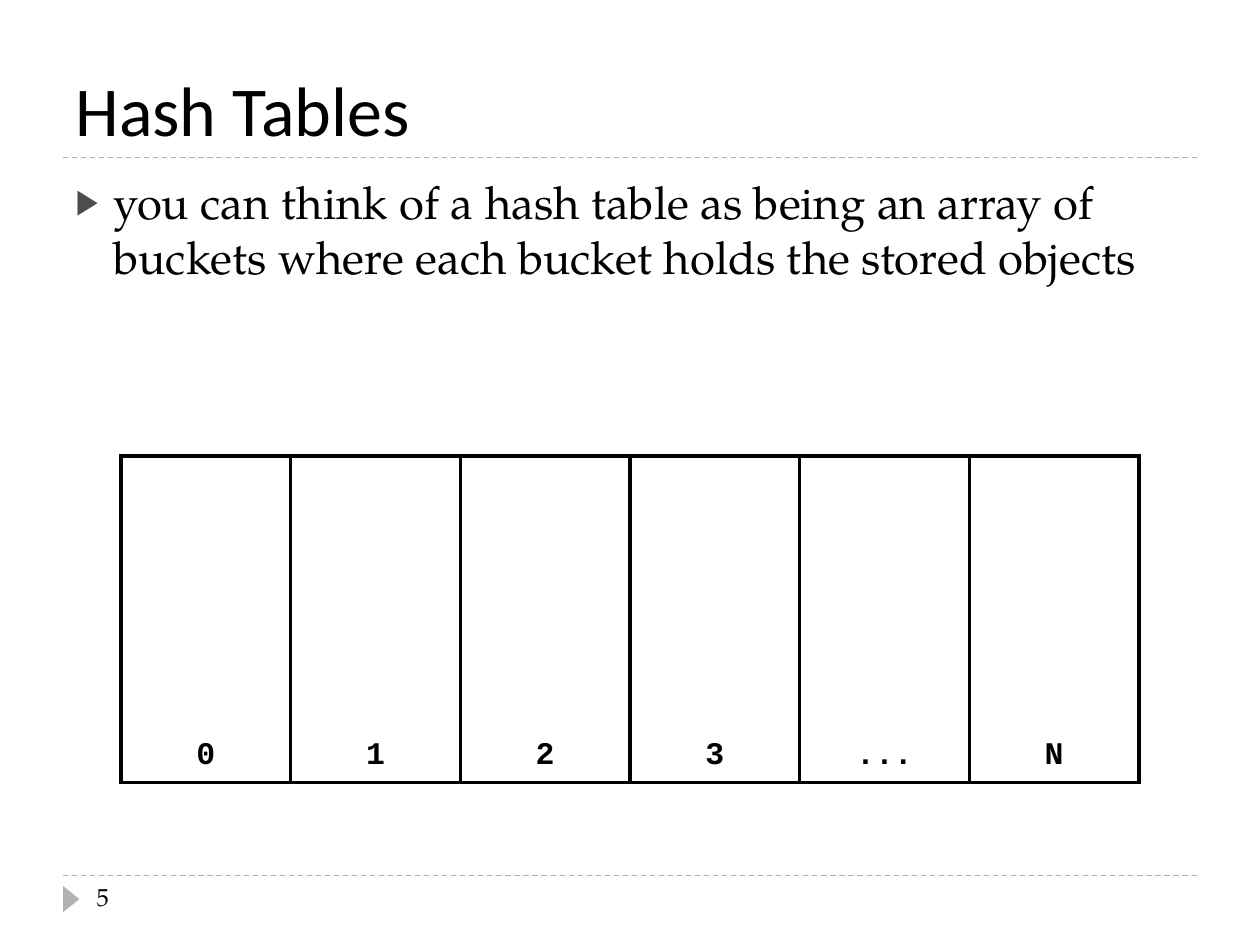
from lxml import etree
from pptx import Presentation
from pptx.dml.color import RGBColor
from pptx.enum.dml import MSO_LINE
from pptx.enum.shapes import MSO_CONNECTOR, MSO_SHAPE
from pptx.enum.text import MSO_ANCHOR, MSO_AUTO_SIZE, PP_ALIGN
from pptx.oxml import parse_xml
from pptx.oxml.ns import nsdecls, qn
from pptx.util import Cm, Pt

STRAIGHT, TRIANGLE = MSO_CONNECTOR.STRAIGHT, MSO_SHAPE.ISOSCELES_TRIANGLE
DASH, BOTTOM, TOP = MSO_LINE.DASH, MSO_ANCHOR.BOTTOM, MSO_ANCHOR.TOP
LEFT, CENTER, NO_FIT = PP_ALIGN.LEFT, PP_ALIGN.CENTER, MSO_AUTO_SIZE.NONE

COLORS = {"text": "000000", "rule": "B2B2B2", "bullet": "4D4D4D", "cell": "FFFFFF"}
HEAD, BODY, CODE = "Calibri", "TeX Gyre Pagella", "Courier New"


def rgb(name):
    return RGBColor.from_string(COLORS[name])


def add_text(tf, text, font, size, align=LEFT, bold=False):
    p = tf.paragraphs[0]
    p.alignment = align
    r = p.add_run()
    r.text = text
    r.font.name, r.font.size, r.font.bold = font, Pt(size), bold
    r.font.color.rgb = rgb("text")
    return p


prs = Presentation()
prs.slide_width, prs.slide_height = Cm(25.4), Cm(19.05)
s = prs.slides.add_slide(prs.slide_layouts[1])

# Dashed rules and footer marker
for y in (17.65, 3.18):
    line = s.shapes.add_connector(STRAIGHT, Cm(1.27), Cm(y), Cm(24.13), Cm(y))
    line.line.color.rgb = rgb("rule")
    line.line.width = Pt(0.75)
    line.line.dash_style = DASH
    etree.SubElement(line._element.spPr, qn("a:effectLst"))

sp = s.shapes.add_shape(TRIANGLE, Cm(1.17), Cm(17.96), Cm(0.53), Cm(0.33))
sp.rotation = 90
sp.shadow.inherit = False
sp.fill.solid()
sp.fill.fore_color.rgb = rgb("rule")
sp.line.fill.background()

# Title
title = s.shapes.title
title.left, title.top, title.width, title.height = Cm(1.27), Cm(0.43), Cm(22.86), Cm(2.74)
tf = title.text_frame
tf.vertical_anchor, tf.auto_size = BOTTOM, NO_FIT
add_text(tf, "Hash Tables", HEAD, 40)

# Slide number
sp = s.shapes.add_textbox(Cm(1.7), Cm(17.65), Cm(5.51), Cm(1.02))
tf = sp.text_frame
tf.word_wrap = True
add_text(tf, "5", BODY, 14)

# Bullet text
body = s.placeholders[1]
body.left, body.top, body.width, body.height = Cm(1.27), Cm(3.38), Cm(22.86), Cm(13.72)
tf = body.text_frame
tf.vertical_anchor, tf.auto_size = TOP, NO_FIT
p = add_text(tf, "you can think of a hash table as being an array of buckets "
             "where each bucket holds the stored objects", BODY, 26)
p.space_before = Pt(6)
pPr = p._p.get_or_add_pPr()
pPr.set("marL", str(Cm(0.76)))
pPr.set("indent", str(-Cm(0.76)))
for xml in (f'<a:buClr {nsdecls("a")}><a:srgbClr val="{COLORS["bullet"]}"/></a:buClr>',
            f'<a:buSzPct {nsdecls("a")} val="76000"/>',
            f'<a:buChar {nsdecls("a")} char="▶"/>'):
    pPr.append(parse_xml(xml))

# Bucket array: tall buckets above their indexes, open between the two rows
INDEXES = ["0", "1", "2", "3", "...", "N"]
ROW_EDGES = ["LRT", "LRB"]
table = s.shapes.add_table(2, len(INDEXES), Cm(2.44), Cm(9.19), Cm(20.52), Cm(6.58)).table
table.first_row = table.horz_banding = False
for col in table.columns:
    col.width = Cm(3.42)
for row, height in zip(table.rows, (5.56, 1.02)):
    row.height = Cm(height)

for i, edges in enumerate(ROW_EDGES):
    for j, index in enumerate(INDEXES):
        cell = table.cell(i, j)
        cell.fill.solid()
        cell.fill.fore_color.rgb = rgb("cell")
        if i == 1:
            add_text(cell.text_frame, index, CODE, 18, CENTER, True)
        tcPr = cell._tc.get_or_add_tcPr()
        for k, side in enumerate("LRTB"):
            fill = (f'<a:solidFill><a:srgbClr val="{COLORS["text"]}"/></a:solidFill>'
                    if side in edges else "<a:noFill/>")
            tcPr.insert(k, parse_xml(
                f'<a:ln{side} {nsdecls("a")} w="{Pt(2.25)}">{fill}</a:ln{side}>'))

prs.save("out.pptx")
